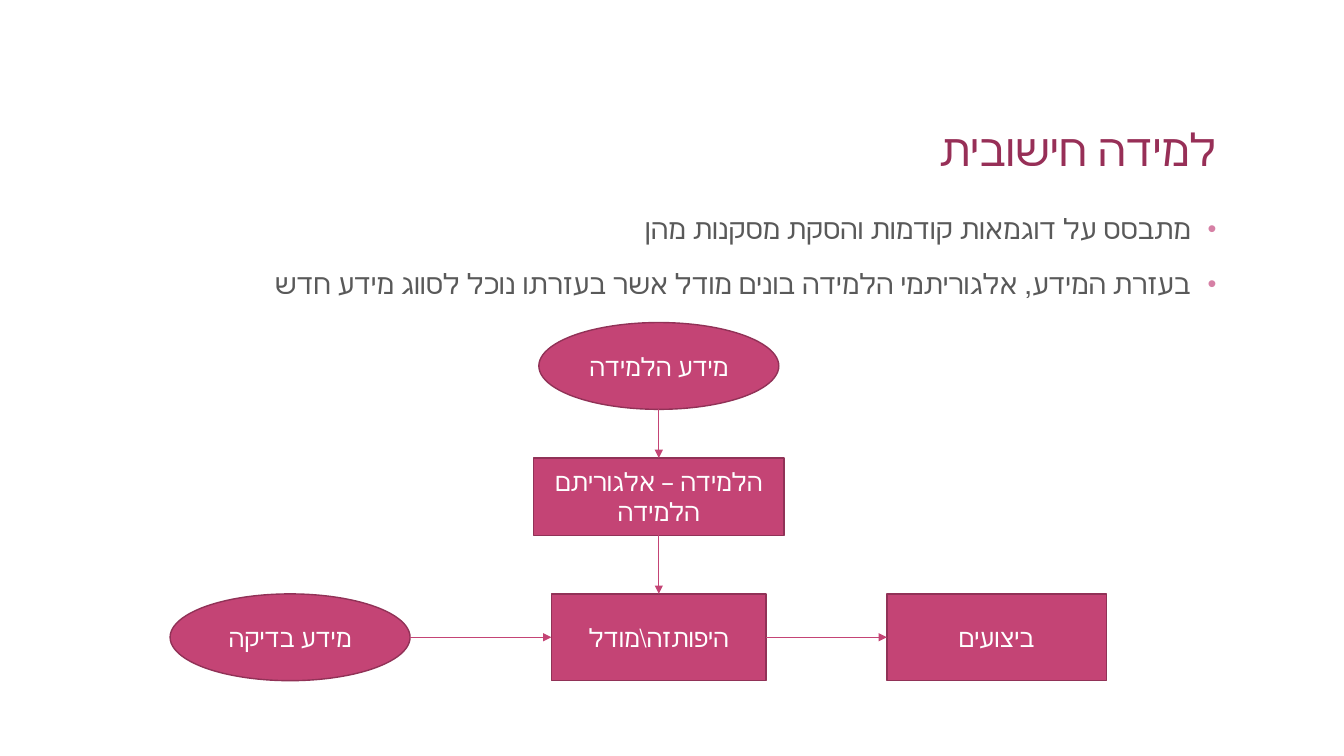
from dataclasses import dataclass

from lxml.etree import SubElement
from pptx import Presentation
from pptx.dml.color import RGBColor
from pptx.enum.shapes import MSO_CONNECTOR, MSO_SHAPE
from pptx.enum.text import MSO_ANCHOR, PP_ALIGN
from pptx.oxml.ns import qn
from pptx.util import Pt


@dataclass(frozen=True)
class Theme:
    font: str = "Cambria"
    title: str = "972F57"
    body: str = "595959"
    bullet: str = "D680A5"
    fill: str = "C44475"
    outline: str = "913257"
    label: str = "FFFFFF"
    title_size: int = 32
    body_size: int = 20
    label_size: int = 18


class Builder:
    """Draws slide elements in one style, with lengths in points."""

    def __init__(self, s, theme):
        """Keep the slide and its theme."""
        self.s, self.theme = s, theme

    def style(self, p, size, color, align):
        """Format a paragraph and its runs."""
        p.alignment = align
        for r in p.runs:
            r.font.size = Pt(size)
            r.font.name = self.theme.font
            r.font.color.rgb = RGBColor.from_string(color)

    def box(self, x, y, w, h, text, anchor):
        """Add a wrapping text box and return its frame."""
        tf = self.s.shapes.add_textbox(Pt(x), Pt(y), Pt(w), Pt(h)).text_frame
        tf.word_wrap = True
        tf.vertical_anchor = anchor
        tf.text = text
        return tf

    def title(self, x, y, w, h, text):
        """Add the slide title."""
        p = self.box(x, y, w, h, text, MSO_ANCHOR.BOTTOM).paragraphs[0]
        p.line_spacing = 0.9
        self.style(p, self.theme.title_size, self.theme.title, PP_ALIGN.RIGHT)

    def bullets(self, x, y, w, h, items):
        """Add a right-to-left bullet list."""
        tf = self.box(x, y, w, h, "\n".join(items), MSO_ANCHOR.TOP)
        for i, p in enumerate(tf.paragraphs):
            p.line_spacing = 0.9
            p.space_before = Pt(18 if i else 0)
            pPr = p._p.get_or_add_pPr()
            pPr.set("rtl", "1")
            pPr.set("marL", str(Pt(18)))
            pPr.set("indent", str(Pt(-18)))
            color = SubElement(pPr, qn("a:buClr"))
            SubElement(color, qn("a:srgbClr"), val=self.theme.bullet)
            SubElement(pPr, qn("a:buSzPct"), val="90000")
            SubElement(pPr, qn("a:buFont"), typeface="Arial")
            SubElement(pPr, qn("a:buChar"), char="•")
            self.style(p, self.theme.body_size, self.theme.body, PP_ALIGN.RIGHT)

    def node(self, kind, cx, cy, w, h, text):
        """Add a labelled shape centred on a point."""
        sp = self.s.shapes.add_shape(kind, Pt(cx - w / 2), Pt(cy - h / 2), Pt(w), Pt(h))
        sp.shadow.inherit = False
        sp.fill.solid()
        sp.fill.fore_color.rgb = RGBColor.from_string(self.theme.fill)
        sp.line.color.rgb = RGBColor.from_string(self.theme.outline)
        sp.line.width = Pt(1)
        tf = sp.text_frame
        tf.word_wrap = True
        tf.vertical_anchor = MSO_ANCHOR.MIDDLE
        tf.text = text
        self.style(tf.paragraphs[0], self.theme.label_size, self.theme.label, PP_ALIGN.CENTER)
        return sp

    def arrow(self, a, b, down=False):
        """Point from one node down or rightwards to a rectangle."""
        if down:
            x = a.left + a.width // 2
            ends = x, a.top + a.height, x, b.top
        else:
            y = a.top + a.height // 2
            ends = a.left + a.width, y, b.left, y
        line = self.s.shapes.add_connector(MSO_CONNECTOR.STRAIGHT, *ends)
        if a.auto_shape_type == MSO_SHAPE.RECTANGLE:
            line.begin_connect(a, 2 if down else 3)
        line.end_connect(b, 0 if down else 1)
        line.line.color.rgb = RGBColor.from_string(self.theme.fill)
        line.line.width = Pt(0.5)
        SubElement(line.line._get_or_add_ln(), qn("a:tailEnd"), type="triangle")
        SubElement(line._element.spPr, qn("a:effectLst"))


def main():
    """Build and save the slide."""
    prs = Presentation()
    prs.slide_width, prs.slide_height = Pt(960), Pt(540)
    b = Builder(prs.slides.add_slide(prs.slide_layouts[6]), Theme())

    b.title(84, 36, 792, 93.6, "למידה חישובית")
    b.bullets(84, 150, 792, 336, [
        "מתבסס על דוגמאות קודמות והסקת מסקנות מהן",
        "בעזרת המידע, אלגוריתמי הלמידה בונים מודל אשר בעזרתו נוכל לסווג מידע חדש",
    ])

    spine, row, height = 470.6, 455.2, 62
    oval, rect = MSO_SHAPE.OVAL, MSO_SHAPE.RECTANGLE
    training = b.node(oval, spine, 261.4, 171.4, height, "מידע הלמידה")
    test = b.node(oval, 207.2, row, 171.4, height, "מידע בדיקה")
    learning = b.node(rect, spine, 354.8, 178.6, 55.4, "הלמידה – אלגוריתם הלמידה")
    model = b.node(rect, spine, row, 153.4, height, "היפותזה\\מודל")
    results = b.node(rect, 711.9, row, 156.8, height, "ביצועים")

    b.arrow(training, learning, down=True)
    b.arrow(learning, model, down=True)
    b.arrow(test, model)
    b.arrow(model, results)
    prs.save("out.pptx")


if __name__ == "__main__":
    main()
